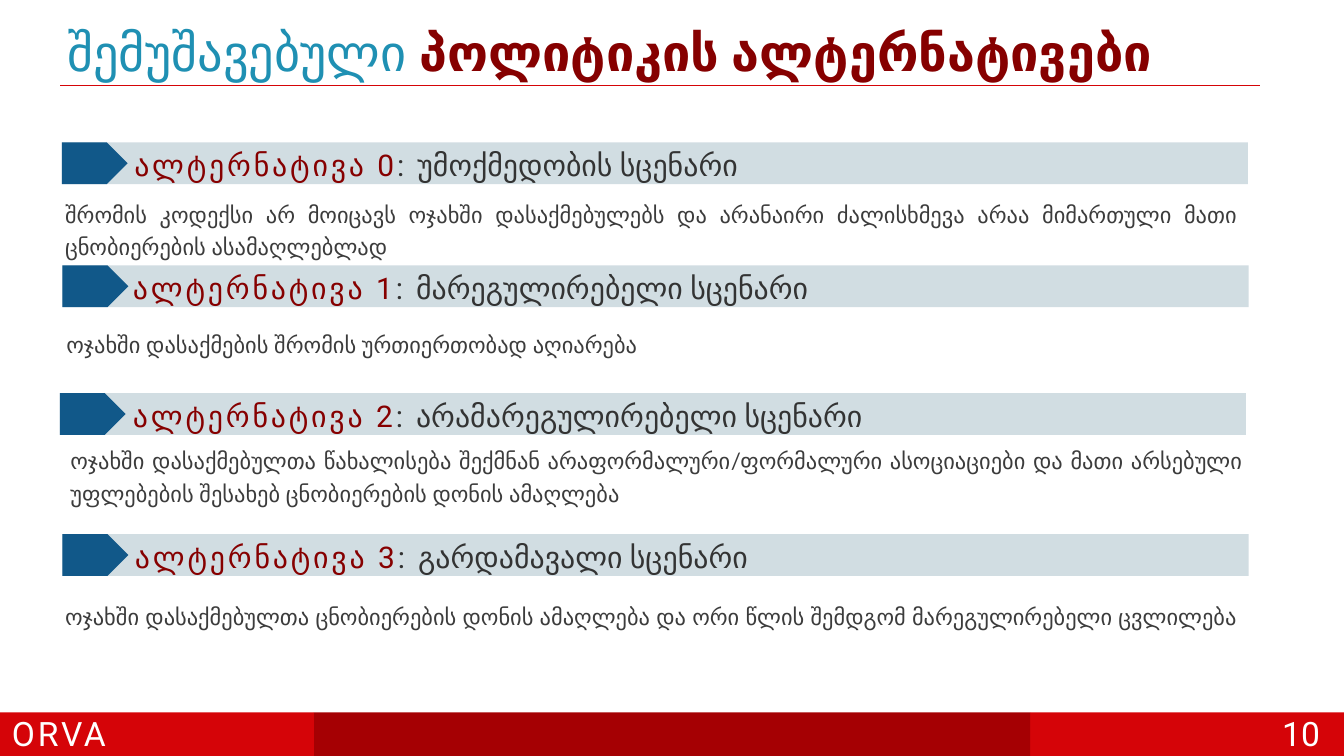
import pptx
import pptx.util
import pptx.dml.color
import pptx.enum.shapes
import pptx.enum.text
from lxml import etree
from pptx.util import Inches

COLORS = {
    "red": "D50408", "dark_red": "A50003", "maroon": "860000",
    "teal": "1F90B3", "blue": "115889", "band": "D1DDE2",
    "heading": "333333", "body": "3C3C3C", "white": "FFFFFF",
}
SHAPE = pptx.enum.shapes.MSO_SHAPE
ALIGN = pptx.enum.text.PP_ALIGN
ANCHOR = pptx.enum.text.MSO_ANCHOR

TITLE = {"name": "Roboto", "size": 54}
HEADING = {"name": "Roboto", "size": 32}
BODY = {"name": "Lato", "size": 24, "color": "body"}
FOOTER = {"name": "Roboto", "size": 36, "color": "white"}

ALTERNATIVES = [
    {"box": (0.92, 2.12, 17.65, 0.62), "heading_x": 1.9, "body_at": (0.87, 2.86),
     "name": "უმოქმედობის სცენარი",
     "body": "შრომის კოდექსი არ მოიცავს ოჯახში დასაქმებულებს და არანაირი ძალისხმევა "
             "არაა მიმართული მათი ცნობიერების ასამაღლებლად"},
    {"box": (0.93, 3.95, 17.65, 0.62), "heading_x": 1.88, "body_at": (0.89, 4.8),
     "name": "მარეგულირებელი სცენარი",
     "body": "ოჯახში დასაქმების შრომის ურთიერთობად აღიარება "},
    {"box": (0.89, 5.85, 17.65, 0.62), "heading_x": 1.88, "body_at": (0.95, 6.53),
     "name": "არამარეგულირებელი სცენარი",
     "body": "ოჯახში დასაქმებულთა წახალისება შექმნან არაფორმალური/ფორმალური ასოციაციები "
             "და მათი არსებული უფლებების შესახებ ცნობიერების დონის ამაღლება"},
    {"box": (0.93, 7.95, 17.65, 0.62), "heading_x": 1.91, "body_at": (0.87, 8.85),
     "name": "გარდამავალი სცენარი",
     "body": "ოჯახში დასაქმებულთა ცნობიერების დონის ამაღლება და ორი წლის შემდგომ "
             "მარეგულირებელი ცვლილება "},
]


def rgb(name):
    """Return the named colour."""
    return pptx.dml.color.RGBColor.from_string(COLORS[name])


def add_block(s, kind, box, color):
    """Add a plain filled shape."""
    sp = s.shapes.add_shape(kind, *map(Inches, box))
    sp.shadow.inherit = False
    sp.fill.solid()
    sp.fill.fore_color.rgb = rgb(color)
    sp.line.fill.background()


def add_text(s, box, runs, anchor=ANCHOR.TOP, **paragraph_format):
    """Add a one-paragraph text box from (text, format) runs."""
    tf = s.shapes.add_textbox(*map(Inches, box)).text_frame
    tf.word_wrap = True
    tf.vertical_anchor = anchor
    p = tf.paragraphs[0]
    for key, value in paragraph_format.items():
        setattr(p, key, value)
    for text, run_format in runs:
        r = p.add_run()
        r.text = text
        values = dict(run_format)
        r.font.color.rgb = rgb(values.pop("color"))
        r.font.size = pptx.util.Pt(values.pop("size"))
        spacing = values.pop("spacing", 0)
        if spacing:
            r._r.get_or_add_rPr().set("spc", str(spacing * 100))
        for key, value in values.items():
            setattr(r.font, key, value)


def add_title(s, box):
    """Add the two-coloured title with a rule along its bottom edge."""
    x, y, w, h = box
    runs = [("შემუშავებული ", {**TITLE, "color": "teal"}),
            ("პოლიტიკის ალტერნატივები", {**TITLE, "color": "maroon", "bold": True})]
    rule = s.shapes.add_connector(
        pptx.enum.shapes.MSO_CONNECTOR.STRAIGHT,
        Inches(x), Inches(y + h), Inches(x + w - 0.2), Inches(y + h))
    rule.line.color.rgb = rgb("red")
    rule.line.width = pptx.util.Pt(1.5)
    etree.SubElement(rule._element.spPr, pptx.oxml.ns.qn("a:effectLst"))
    add_text(s, box, runs, ANCHOR.BOTTOM, line_spacing=0.9)


def add_alternative(s, number, box, heading_x, body_at, name, body):
    """Add one heading band with its arrow tag and description."""
    x, y, w, h = box
    add_block(s, SHAPE.RECTANGLE, box, "band")
    add_block(s, SHAPE.PENTAGON, (x, y, 0.98, h), "blue")
    runs = [(f"ალტერნატივა {number}", {**HEADING, "color": "maroon", "spacing": 3}),
            (": ", {**HEADING, "color": "heading", "spacing": 3}),
            (name, {**HEADING, "color": "heading"})]
    add_text(s, (heading_x, y - 0.09, 16.66, 0.85), runs, line_spacing=1.2)
    add_text(s, (*body_at, 17.64, 0.7), [(body, BODY)],
             alignment=ALIGN.JUSTIFY, line_spacing=1.2)


def add_footer(s, box):
    """Add the three-part footer bar with its label and page number."""
    x, y, w, h = box
    side = 4.67
    add_block(s, SHAPE.RECTANGLE, (x + w - side, y, side, h), "red")
    add_block(s, SHAPE.RECTANGLE, (x + side, y, w - 2 * side, h), "dark_red")
    add_block(s, SHAPE.RECTANGLE, (x, y, side, h), "red")
    add_text(s, (x + 0.08, y - 0.07, 1.97, 0.76),
             [("ORVA", {**FOOTER, "spacing": 3})], ANCHOR.MIDDLE)
    add_text(s, (x + w - 1.25, y + 0.06, 0.99, 0.6), [("10", FOOTER)],
             ANCHOR.BOTTOM, alignment=ALIGN.RIGHT)


def main():
    """Build and save the slide."""
    prs = pptx.Presentation()
    prs.slide_width, prs.slide_height = Inches(20), Inches(11.25)
    s = prs.slides.add_slide(prs.slide_layouts[6])
    add_footer(s, (0, 10.6, 20, 0.65))
    add_title(s, (0.9, 0.21, 18.05, 1.06))
    for number, alternative in enumerate(ALTERNATIVES):
        add_alternative(s, number, **alternative)
    prs.save("out.pptx")


if __name__ == "__main__":
    main()
